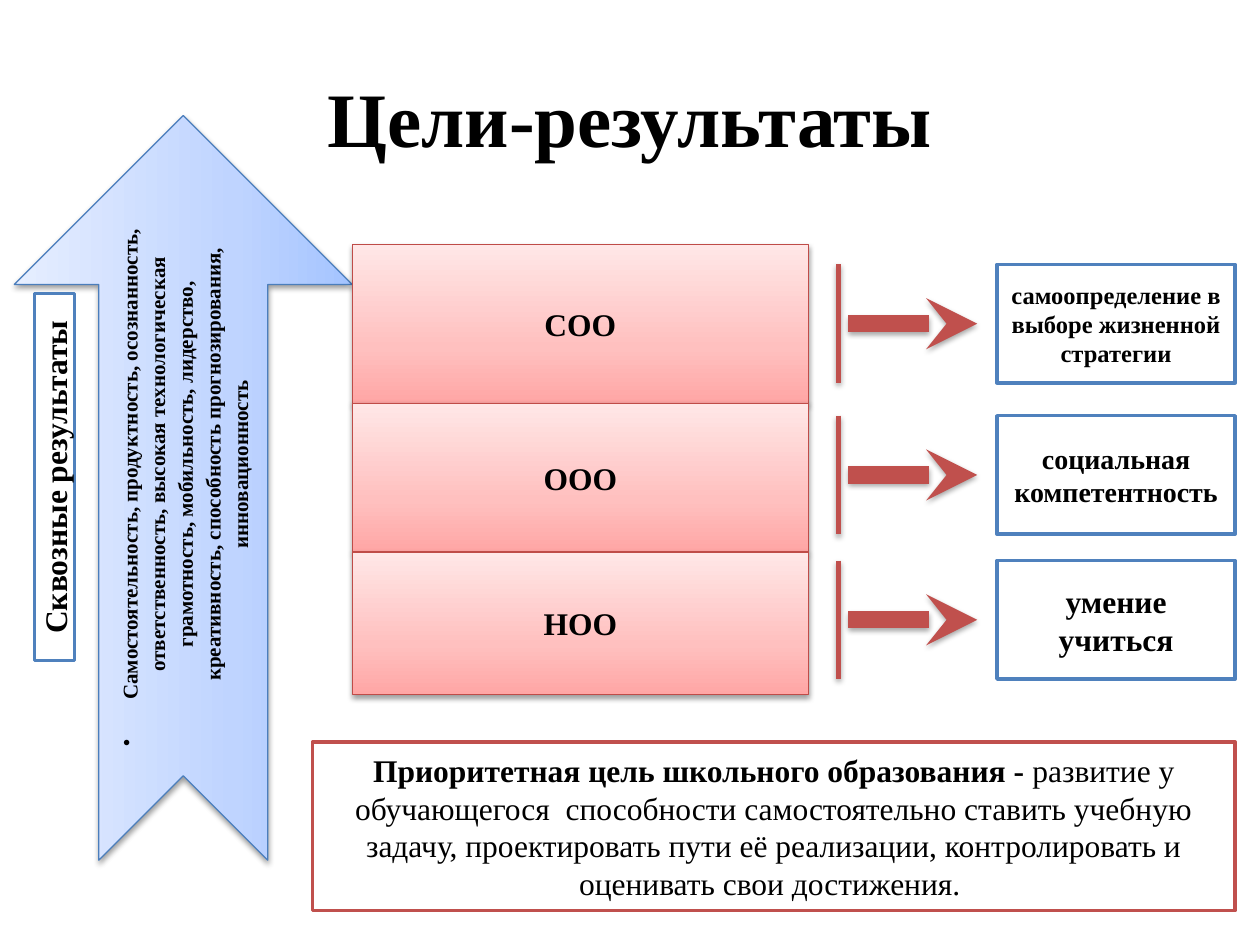
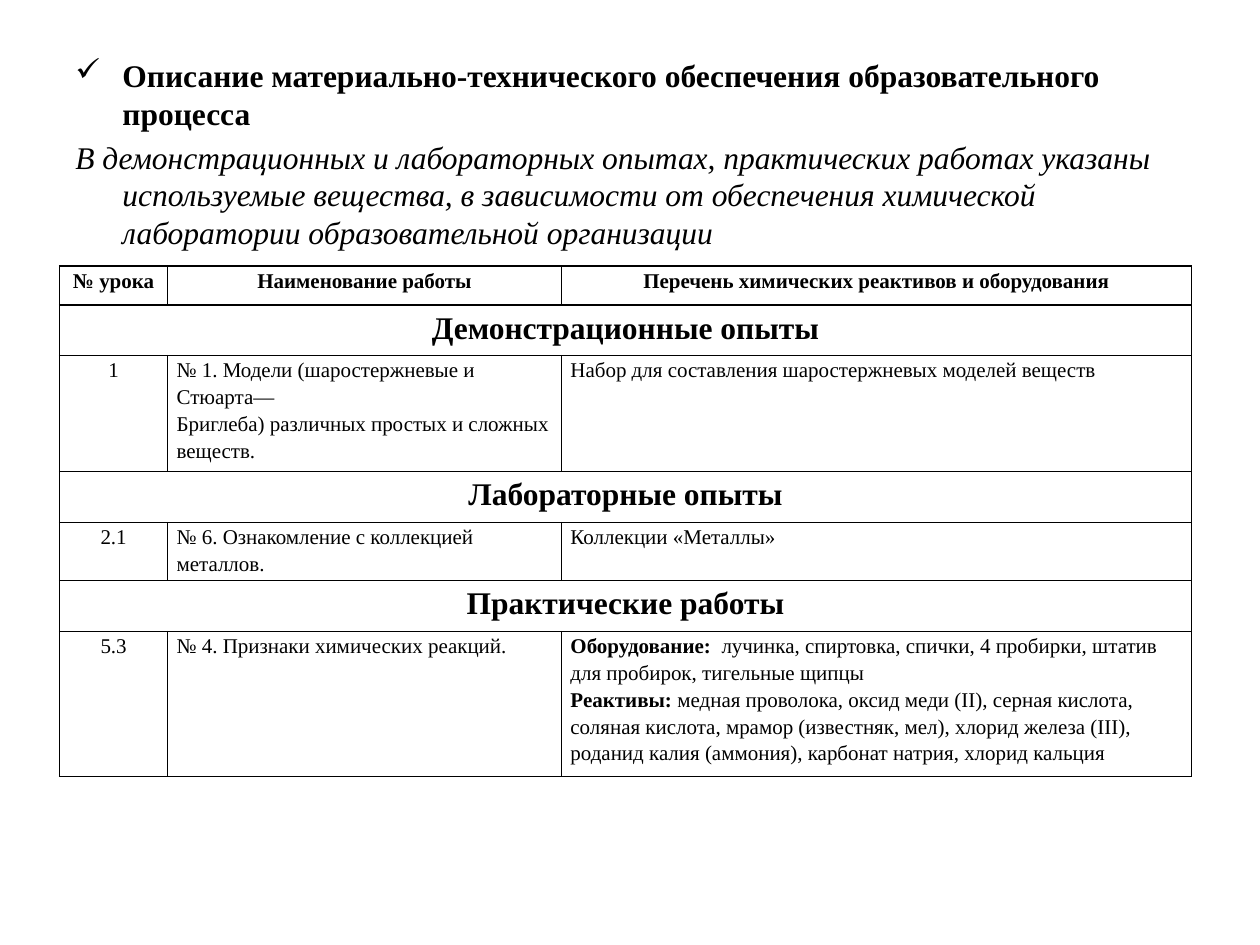
from copy import deepcopy

from lxml import etree
from pptx import Presentation
from pptx.dml.color import RGBColor
from pptx.enum.shapes import MSO_CONNECTOR, MSO_SHAPE
from pptx.enum.text import MSO_ANCHOR, PP_ALIGN
from pptx.oxml.ns import qn
from pptx.util import Cm, Pt

CENTER, LEFT = PP_ALIGN.CENTER, PP_ALIGN.LEFT
MIDDLE, TOP = MSO_ANCHOR.MIDDLE, MSO_ANCHOR.TOP
RECTANGLE = MSO_SHAPE.RECTANGLE
NOTCHED_ARROW = MSO_SHAPE.NOTCHED_RIGHT_ARROW
STRAIGHT = MSO_CONNECTOR.STRAIGHT

FONT = "Times New Roman"
BLACK = RGBColor(0x00, 0x00, 0x00)
WHITE = RGBColor(0xFF, 0xFF, 0xFF)
BLUE = RGBColor(0x4F, 0x81, 0xBD)
BLUE_EDGE = RGBColor(0x4B, 0x7E, 0xBC)
RED = RGBColor(0xC0, 0x50, 0x4D)
RED_EDGE = RGBColor(0xBF, 0x4C, 0x48)
BLUE_STOPS = (RGBColor(0xA4, 0xC4, 0xFF), RGBColor(0xBF, 0xD4, 0xFF), RGBColor(0xE6, 0xEE, 0xFF))
RED_STOPS = (RGBColor(0xFF, 0xA6, 0xA5), RGBColor(0xFF, 0xC0, 0xBF), RGBColor(0xFF, 0xE7, 0xE7))
STOP_POSITIONS = (0, 0.35, 1)


def write_text(frame, text, size=18, bold=True, italic=False, align=CENTER,
               anchor=MIDDLE, spacing=None, before=0, bullet=None, hanging=False):
    frame.word_wrap = True
    frame.vertical_anchor = anchor
    for line in text.split("\n"):
        first = not frame.text
        para = frame.paragraphs[0] if first else frame.add_paragraph()
        para.alignment = align
        para.line_spacing = spacing
        if before and not first:
            para.space_before = Pt(before)
        properties = para._p.get_or_add_pPr()
        if hanging:
            properties.set("marL", str(Cm(0.95)))
            properties.set("indent", str(-Cm(0.95)))
        if bullet:
            etree.SubElement(properties, qn("a:buChar"), char=bullet)
        lead, _, rest = line.rpartition("|")
        for part, is_bold in ((lead, True), (rest, bold)):
            if part:
                span = para.add_run()
                span.text = part
                span.font.name = FONT
                span.font.size = Pt(size)
                span.font.bold = is_bold
                span.font.italic = italic
                span.font.color.rgb = BLACK


def set_look(item, edge, width, stops=None, shadow=None, arrowhead=None):
    item.line.color.rgb = edge
    item.line.width = Pt(width)
    properties = item._element.spPr
    if stops:
        item.fill.gradient()
        item.fill.gradient_angle = 90
        stop_list = properties.find(qn("a:gradFill")).find(qn("a:gsLst"))
        stop_list.append(deepcopy(stop_list[-1]))
        for stop, color, position in zip(item.fill.gradient_stops, stops, STOP_POSITIONS):
            stop.color.rgb = color
            stop.position = position
    elif hasattr(item, "fill"):
        item.fill.solid()
        item.fill.fore_color.rgb = WHITE
    if arrowhead:
        etree.SubElement(properties.find(qn("a:ln")), qn("a:tailEnd"), type=arrowhead)
    effects = etree.SubElement(properties, qn("a:effectLst"))
    if shadow:
        outer = etree.SubElement(effects, qn("a:outerShdw"), blurRad="40000", dist="20000",
                                 dir="5400000", rotWithShape="0")
        color = etree.SubElement(outer, qn("a:srgbClr"), val=str(BLACK))
        etree.SubElement(color, qn("a:alpha"), val=str(shadow * 1000))


deck = Presentation()
deck.slide_width, deck.slide_height = Cm(25.4), Cm(19.05)
blank = deck.slide_layouts[6]

page = deck.slides.add_slide(blank)
title = page.shapes.add_textbox(Cm(1.27), Cm(0.76), Cm(22.86), Cm(3.18))
write_text(title.text_frame, "Цели-результаты", size=44)

skills = page.shapes.add_shape(NOTCHED_ARROW, Cm(-3.81), Cm(6.43), Cm(15.01), Cm(6.81))
skills.rotation = 270
set_look(skills, BLUE_EDGE, 0.75, stops=BLUE_STOPS, shadow=38)
write_text(skills.text_frame,
           "Самостоятельность, продуктность, осознанность, ответственность, "
           "высокая технологическая грамотность, мобильность, лидерство, "
           "креативность, способность прогнозирования, инновационность",
           size=12, spacing=1.1, bullet="•", hanging=True)

RESULT_HEIGHT = 2.39
stages = [
    ("СОО", 4.93, 3.2, "самоопределение в выборе жизненной стратегии", 14, 5.33),
    ("ООО", 8.13, 3, "социальная компетентность", 16, 8.38),
    ("НОО", 11.13, 2.87, "умение учиться", 18, 11.3),
]
for stage, stage_top, stage_height, result, size, result_top in stages:
    box = page.shapes.add_shape(RECTANGLE, Cm(7.1), Cm(stage_top), Cm(9.2), Cm(stage_height))
    set_look(box, RED_EDGE, 0.75, stops=RED_STOPS, shadow=38)
    write_text(box.text_frame, stage)

    bottom = result_top + RESULT_HEIGHT
    middle = result_top + RESULT_HEIGHT / 2
    bar = page.shapes.add_connector(STRAIGHT, Cm(16.9), Cm(result_top), Cm(16.9), Cm(bottom))
    set_look(bar, RED, 3, shadow=35)
    arrow = page.shapes.add_connector(STRAIGHT, Cm(17.1), Cm(middle), Cm(19.7), Cm(middle))
    set_look(arrow, RED, 9.75, shadow=35, arrowhead="stealth")

    box = page.shapes.add_shape(RECTANGLE, Cm(20.1), Cm(result_top), Cm(4.8), Cm(RESULT_HEIGHT))
    set_look(box, BLUE, 2)
    write_text(box.text_frame, result, size=size)

caption = page.shapes.add_shape(RECTANGLE, Cm(0.7), Cm(5.92), Cm(0.8), Cm(7.4))
set_look(caption, BLUE, 2)
write_text(caption.text_frame, "Сквозные результаты")
caption.text_frame._txBody.bodyPr.set("vert", "vert270")

goal = page.shapes.add_shape(RECTANGLE, Cm(6.3), Cm(14.96), Cm(18.6), Cm(3.4))
set_look(goal, RED, 2)
write_text(goal.text_frame,
           "Приоритетная цель школьного образования - |развитие у обучающегося  "
           "способности самостоятельно ставить учебную задачу, проектировать пути "
           "её реализации, контролировать и оценивать свои достижения. ", bold=False)

page = deck.slides.add_slide(blank)
intro = page.shapes.add_textbox(Cm(1.27), Cm(1), Cm(22.86), Cm(4.2)).text_frame
write_text(intro, "Описание материально-технического обеспечения образовательного процесса",
           align=LEFT, anchor=TOP, bullet="✓", hanging=True)
write_text(intro,
           "В демонстрационных и лабораторных опытах, практических работах указаны "
           "используемые вещества, в зависимости от обеспечения химической "
           "лаборатории образовательной организации",
           bold=False, italic=True, align=LEFT, anchor=TOP, before=3.6, hanging=True)

rows = [
    ("№ урока", "Наименование работы", "Перечень химических реактивов и оборудования"),
    ("Демонстрационные опыты",),
    ("1",
     "№ 1. Модели (шаростержневые и Стюарта—\nБриглеба) различных простых и сложных веществ.",
     "Набор для составления шаростержневых моделей веществ"),
    ("Лабораторные опыты",),
    ("2.1", "№ 6. Ознакомление с коллекцией металлов.", "Коллекции «Металлы»"),
    ("Практические работы",),
    ("5.3", "№ 4. Признаки химических реакций.",
     "Оборудование:|  лучинка, спиртовка, спички, 4 пробирки, штатив для пробирок, "
     "тигельные щипцы\n"
     "Реактивы: |медная проволока, оксид меди (II), серная кислота, соляная кислота, "
     "мрамор (известняк, мел), хлорид железа (III), роданид калия (аммония), "
     "карбонат натрия, хлорид кальция"),
]
column_widths = (2.18, 7.94, 12.7)
row_heights = (0.79, 0.95, 2.17, 1.03, 1.07, 1.03, 2.7)
table = page.shapes.add_table(len(rows), len(column_widths), Cm(1.2), Cm(5.36),
                              Cm(sum(column_widths)), Cm(sum(row_heights))).table
for column, width in zip(table.columns, column_widths):
    column.width = Cm(width)
for row, height in zip(table.rows, row_heights):
    row.height = Cm(height)

for row_index, texts in enumerate(rows):
    is_section = len(texts) == 1
    if is_section:
        table.cell(row_index, 0).merge(table.cell(row_index, 2))
    for column_index in range(len(column_widths)):
        cell = table.cell(row_index, column_index)
        properties = cell._tc.get_or_add_tcPr()
        for side in ("a:lnL", "a:lnR", "a:lnT", "a:lnB"):
            border = etree.SubElement(properties, qn(side), w=str(Pt(1)))
            paint = etree.SubElement(border, qn("a:solidFill"))
            etree.SubElement(paint, qn("a:srgbClr"), val=str(BLACK))
        cell.fill.solid()
        cell.fill.fore_color.rgb = WHITE
        if is_section:
            if column_index == 0:
                write_text(cell.text_frame, texts[0], anchor=TOP)
            continue
        cell.margin_left = cell.margin_right = Cm(0.18)
        cell.margin_top = cell.margin_bottom = 0
        is_header = row_index == 0
        write_text(cell.text_frame, texts[column_index], size=12, bold=is_header,
                   align=CENTER if is_header or column_index == 0 else LEFT,
                   anchor=TOP, spacing=1.15)

deck.save("out.pptx")
